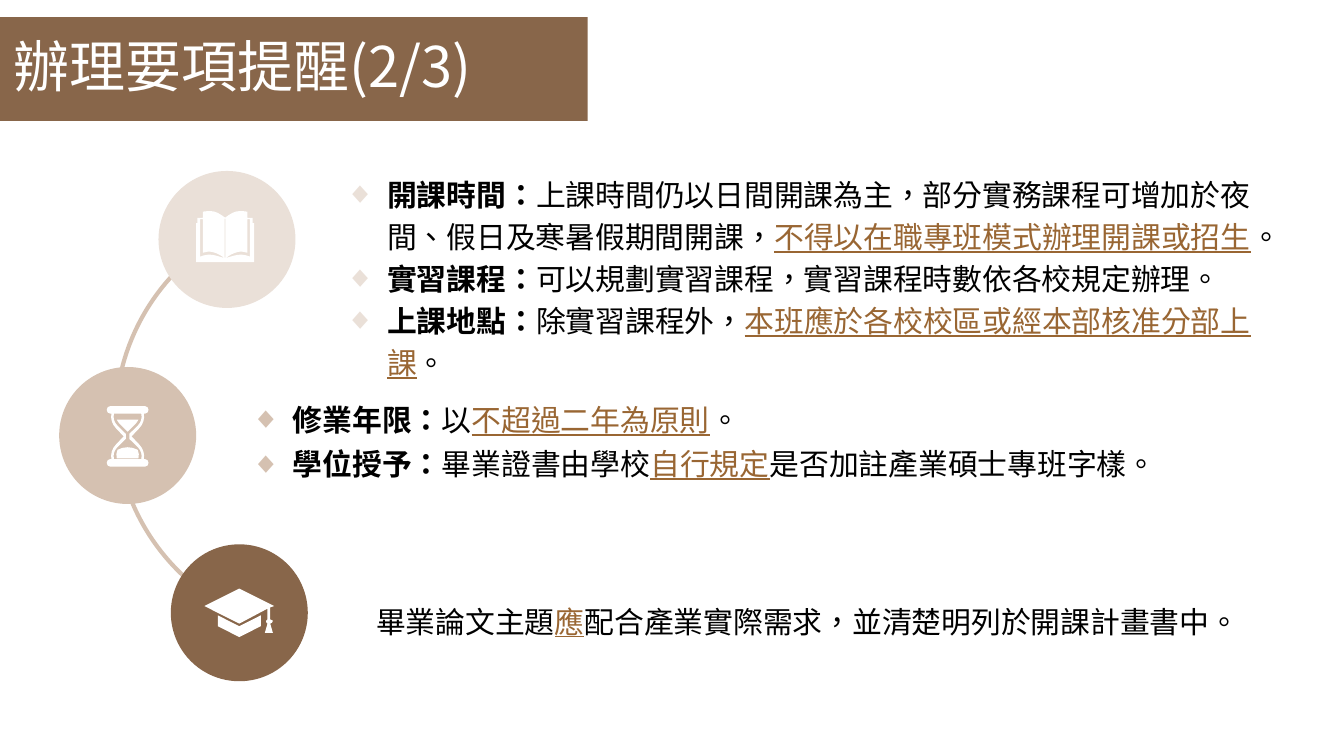
from lxml import etree
from pptx import Presentation
from pptx.dml.color import RGBColor
from pptx.enum.lang import MSO_LANGUAGE_ID as Language
from pptx.enum.shapes import MSO_SHAPE as Preset
from pptx.enum.text import MSO_AUTO_SIZE as AutoSize, PP_ALIGN as Align
from pptx.oxml.ns import qn
from pptx.util import Pt

SANS = "Noto Sans CJK SC"
WHITE, BROWN, TAN, CREAM = "FFFFFF", "88664A", "D5C1B1", "EAE0D8"
STYLES = {
    "title": (SANS, 30, WHITE, False, False),
    "head": (SANS, 16, "000000", True, False),
    "body": ("Arial", 16, "000000", False, False),
    "key": ("Arial", 16, "996633", False, True),
}
TITLE = [("title", "辦理要項提醒(2/3)")]
TEXT_BLOCKS = [
    {"box": (177.8, 87.8, 529.2, 98.6), "bullet": CREAM, "line": 22.5, "right": 26, "paragraphs": [
        [("head", "開課時間："),
         ("body", "上課時間仍以日間開課為主，部分實務課程可增加於夜間、假日及寒暑假期間開課，"),
         ("key", "不得以在職專班模式辦理開課或招生"), ("body", "。")],
        [("head", "實習課程："), ("body", "可以規劃實習課程，實習課程時數依各校規定辦理。")],
        [("head", "上課地點："), ("body", "除實習課程外，"),
         ("key", "本班應於各校校區或經本部核准分部上課"), ("body", "。")]]},
    {"box": (127.4, 211.7, 564.5, 51.1), "bullet": TAN, "before": 4.5, "paragraphs": [
        [("head", "修業年限："), ("body", "以"), ("key", "不超過二年為原則"), ("body", "。")],
        [("head", "學位授予："), ("body", "畢業證書由學校"), ("key", "自行規定"),
         ("body", "是否加註產業碩士專班字樣。")]]},
    {"box": (194.4, 319.7, 580.3, 26.6), "before": 4.5, "paragraphs": [
        [("body", "畢業論文主題"), ("key", "應"),
         ("body", "配合產業實際需求，並清楚明列於開課計畫書中。")]]},
]

CAP = [
    [(0, -13), (18.7, -3.6), (16.6, -2.9), (16.6, 3.6), (17.3, 3.6, 18, 4.3, 18, 4.3),
     (18, 5, 17.3, 5.8, 16.6, 5.8), (18, 10.8), (13.7, 10.8), (15.1, 5.8),
     (14.4, 5.8, 14.4, 5, 14.4, 4.3), (14.4, 4.3, 15.1, 3.6, 15.1, 3.6),
     (15.1, -2.2), (0, 5.8), (-18.7, -3.6)],
    [(-11.5, 1.4), (0, 7.2), (11.5, 1.4), (11.5, 7.2), (0, 13), (-11.5, 7.2)],
]
GLASS_FRAME = [(9.4, -16.2), (10.4, -16.2, 11.2, -15.3, 11.2, -14.2),
               (11.2, -13.1, 10.4, -12.2, 9.4, -12.2), (8.7, -12.2),
               (9.2, -9.4, 8.4, -6.6, 6.2, -4.3), (2.1, 0)]
GLASS_INSIDE = [(7.3, -12.2), (7.9, -9.9, 7.2, -7.5, 5.5, -5.8), (0.9, -1.3)]
UPPER_SAND = [(5.8, -9), (5.4, -8.1, 4.9, -7.5, 4.5, -7), (0, -2.5)]
LOWER_SAND = [(0, 5.8), (2, 5.8, 3.6, 6.3, 5.4, 7.2), (6.1, 8.6, 6.2, 10.4, 5.8, 11.8)]
BOOK_COVER = [(0, -10.5), (2.9, -12.6, 5, -14, 7.6, -14), (9, -14, 10.4, -14, 11.9, -13.7),
              (11.9, -10.4), (14.8, -10.4), (14.8, -7.6), (15.5, -7.6), (15.5, 13.3)]
BOOK_EDGE = [(0.3, 11.2), (5.4, 9.7, 8.3, 8.3, 13.3, 10.4), (13.3, -9.7), (11.9, -9.7),
             (11.9, 8.3), (8.3, 6.8, 4, 8.3, 0.3, 11.2)]
BOOK_SPINE = [(0.2, -10), (0.2, 11)]


def pairs(values):
    return list(zip(values[::2], values[1::2]))


def flip(outline, x_sign, y_sign):
    return [tuple(number for x, y in pairs(values) for number in (x * x_sign, y * y_sign))
            for values in outline]


def backwards(outline):
    result = [outline[-1][-2:]]
    for before, values in zip(outline[-2::-1], outline[:0:-1]):
        controls = values[2:4] + values[:2] if len(values) == 6 else ()
        result.append(controls + before[-2:])
    return result


def mirrored(outline, x_sign=-1, y_sign=1):
    other = flip(backwards(outline), x_sign, y_sign)
    return outline + (other[1:] if other[0] == outline[-1][-2:] else other)


def four_way(outline):
    return mirrored(mirrored(outline, 1, -1))


BADGES = [
    ((128.2, 328.3), BROWN, (0, 0), CAP),
    ((68.4, 233.3), TAN, (0, 0.5), [four_way(GLASS_FRAME), four_way(GLASS_INSIDE),
                                    mirrored(UPPER_SAND), mirrored(LOWER_SAND)]),
    ((121.6, 128.3), CREAM, (-1, -1.2), [mirrored(BOOK_COVER), BOOK_EDGE, flip(BOOK_EDGE, -1, 1),
                                         mirrored(BOOK_SPINE)]),
]
DIAMETER = 73.4


def color(value):
    return RGBColor.from_string(value)


def paint(shape, fill):
    shape.shadow.inherit = False
    shape.fill.solid()
    shape.fill.fore_color.rgb = color(fill)
    shape.line.fill.background()


def add_runs(paragraph, runs):
    paragraph.alignment = Align.LEFT
    for style, text in runs:
        name, size, ink, bold, underline = STYLES[style]
        run = paragraph.add_run()
        run.text = text
        font = run.font
        font.name, font.size, font.bold, font.underline = name, Pt(size), bold, underline
        font.color.rgb = color(ink)
        font.language_id = Language.TRADITIONAL_CHINESE
        latin = run._r.rPr.find(qn("a:latin"))
        latin.addnext(etree.Element(qn("a:ea"), typeface=name))


def add_bullet(paragraph, ink):
    properties = paragraph._p.get_or_add_pPr()
    properties.set("marL", str(Pt(22.5)))
    properties.set("indent", str(Pt(-22.5)))
    bullet_color = etree.SubElement(properties, qn("a:buClr"))
    etree.SubElement(bullet_color, qn("a:srgbClr"), val=ink)
    etree.SubElement(properties, qn("a:buFont"), typeface="Arial")
    etree.SubElement(properties, qn("a:buChar"), char="◆")


def add_text_block(slide, block):
    frame = slide.shapes.add_textbox(*map(Pt, block["box"])).text_frame
    frame.word_wrap = True
    frame.auto_size = AutoSize.SHAPE_TO_FIT_TEXT
    frame.margin_right = Pt(block.get("right", 7.2))
    for index, runs in enumerate(block["paragraphs"]):
        paragraph = frame.add_paragraph() if index else frame.paragraphs[0]
        add_runs(paragraph, runs)
        if "line" in block:
            paragraph.line_spacing = Pt(block["line"])
        if "before" in block:
            paragraph.space_before = Pt(block["before"])
        if "bullet" in block:
            add_bullet(paragraph, block["bullet"])


def add_icon(shapes, origin, outlines):
    placed = [[[(Pt(origin[0] + x), Pt(origin[1] + y)) for x, y in pairs(values)]
               for values in outline] for outline in outlines]
    builder = shapes.build_freeform(*placed[0][0][-1], scale=1.0)
    for index, outline in enumerate(placed):
        ends = [points[-1] for points in outline]
        if index:
            builder.move_to(*ends[0])
        builder.add_line_segments(ends[1:], close=True)
    icon = builder.convert_to_shape()
    segments = [points for outline in placed for points in outline[1:]]
    for line, points in zip(list(icon._element.iter(qn("a:lnTo"))), segments):
        if len(points) == 3:
            line.tag = qn("a:cubicBezTo")
            for position, (x, y) in enumerate(points[:2]):
                line.insert(position, etree.Element(
                    qn("a:pt"), x=str(x - icon.left), y=str(y - icon.top)))
    paint(icon, WHITE)


def add_badge(slide, center, fill, offset, outlines):
    shapes = slide.shapes.add_group_shape().shapes
    left, top = (value - DIAMETER / 2 for value in center)
    paint(shapes.add_shape(Preset.OVAL, Pt(left), Pt(top), Pt(DIAMETER), Pt(DIAMETER)), fill)
    add_icon(shapes, (center[0] + offset[0], center[1] + offset[1]), outlines)


def main():
    presentation = Presentation()
    presentation.slide_width, presentation.slide_height = Pt(720), Pt(405)
    slide = presentation.slides.add_slide(presentation.slide_layouts[6])

    arc = slide.shapes.add_shape(Preset.ARC, Pt(61.9), Pt(110.2), Pt(232.6), Pt(229.7))
    arc.adjustments[0], arc.adjustments[1] = 170.185, 37.355
    arc.rotation = 180
    arc.shadow.inherit = False
    arc.fill.background()
    arc.line.color.rgb = color(TAN)
    arc.line.width = Pt(2.25)

    banner = slide.shapes.add_shape(Preset.RECTANGLE, 0, Pt(9.2), Pt(314.8), Pt(55.6))
    paint(banner, BROWN)
    frame = banner.text_frame
    frame.margin_left = frame.margin_right = frame.margin_top = frame.margin_bottom = Pt(7.2)
    add_runs(frame.paragraphs[0], TITLE)
    frame.paragraphs[0].line_spacing = 0.9

    for block in TEXT_BLOCKS:
        add_text_block(slide, block)
    for badge in BADGES:
        add_badge(slide, *badge)
    presentation.save("out.pptx")


if __name__ == "__main__":
    main()
